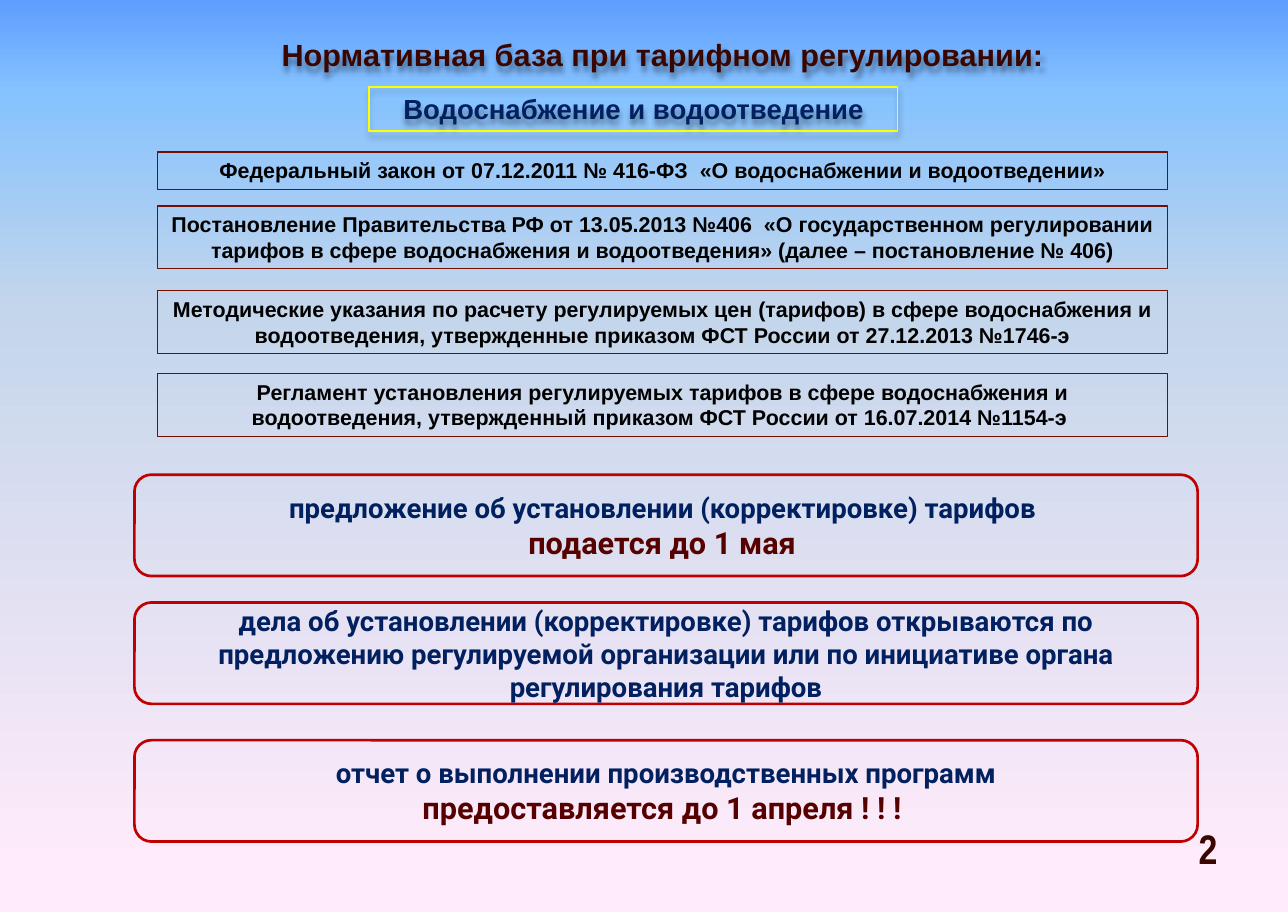
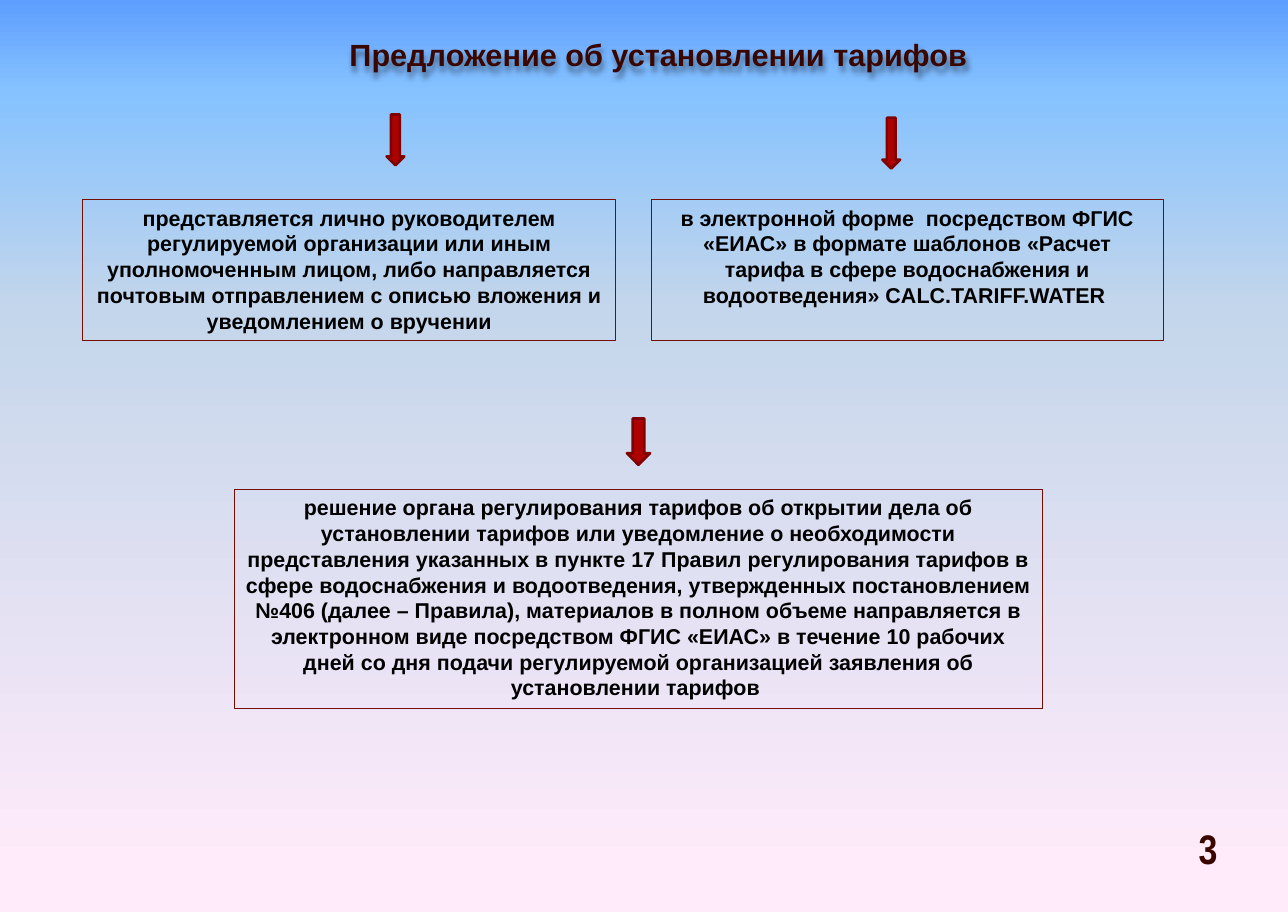
from lxml.etree import SubElement
from pptx import Presentation
from pptx.dml.color import RGBColor
from pptx.enum.shapes import MSO_SHAPE
from pptx.enum.text import MSO_ANCHOR, PP_ALIGN
from pptx.oxml.ns import qn
from pptx.util import Inches, Pt

MAROON = "3A0700"
DEEP_RED = "560000"
NAVY = "002060"
BLACK = "000000"
FRAME = "730E00"
RED = "C00000"
ARROW_FILL = "AD0101"
ARROW_LINE = "800101"
YELLOW = "FFFF00"
BACKGROUND_STOPS = [(0, "5E9EFF"), (10, "85C2FF"), (34, "C4D6EB"), (95, "FFEBFA")]


def color(value):
    return RGBColor.from_string(value)


class Deck:
    def __init__(self, width, height):
        self.presentation = Presentation()
        self.presentation.slide_width = Inches(width)
        self.presentation.slide_height = Inches(height)
        self.slide = None
        self.paint_background()

    def paint_background(self):
        master = self.presentation.slide_master
        fill = master.background.fill
        fill.gradient()
        fill.gradient_angle = 270
        stops = master.element.find(".//" + qn("a:gsLst"))
        for stop in list(stops):
            stops.remove(stop)
        for position, value in BACKGROUND_STOPS:
            stop = SubElement(stops, qn("a:gs"), pos=str(position * 1000))
            SubElement(stop, qn("a:srgbClr"), val=value)

    def add_slide(self, title, number):
        self.slide = self.presentation.slides.add_slide(self.presentation.slide_layouts[6])
        title_box = self.text_box(1.11, 0.28, 9.81, 0.44)
        self.set_text(title_box, [(title, 20, MAROON)], "Arial")
        self.cast_shadow(title_box)
        number_box = self.text_box(10.48, 7.48, 0.97, 0.44)
        frame = number_box.text_frame
        frame.margin_left = frame.margin_right = frame.margin_top = frame.margin_bottom = 0
        self.set_text(number_box, [(str(number), 27, MAROON)], "Arial Narrow", MSO_ANCHOR.MIDDLE)

    def text_box(self, left, top, width, height):
        return self.slide.shapes.add_textbox(Inches(left), Inches(top), Inches(width), Inches(height))

    def shape(self, kind, left, top, width, height, line, weight, fill=None):
        shape = self.slide.shapes.add_shape(
            kind, Inches(left), Inches(top), Inches(width), Inches(height))
        shape.shadow.inherit = False
        shape.line.color.rgb = color(line)
        shape.line.width = Pt(weight)
        if fill:
            shape.fill.solid()
            shape.fill.fore_color.rgb = color(fill)
        else:
            shape.fill.background()
        return shape

    def set_text(self, shape, lines, font, anchor=MSO_ANCHOR.TOP):
        frame = shape.text_frame
        frame.word_wrap = True
        frame.vertical_anchor = anchor
        for index, (text, size, value) in enumerate(lines):
            paragraph = frame.add_paragraph() if index else frame.paragraphs[0]
            paragraph.text = text
            paragraph.alignment = PP_ALIGN.CENTER
            paragraph.font.name = font
            paragraph.font.size = Pt(size)
            paragraph.font.bold = True
            paragraph.font.color.rgb = color(value)

    def cast_shadow(self, shape):
        shape.shadow.inherit = False
        effects = shape.element.spPr.find(qn("a:effectLst"))
        shadow = SubElement(effects, qn("a:outerShdw"), blurRad=str(Pt(4)), dist=str(Pt(3)),
                            dir="5400000", rotWithShape="0")
        tint = SubElement(shadow, qn("a:srgbClr"), val=BLACK)
        SubElement(tint, qn("a:alpha"), val="40000")

    def subtitle(self, text, left, top, width, height):
        shape = self.shape(MSO_SHAPE.RECTANGLE, left, top, width, height, YELLOW, 0.75)
        self.set_text(shape, [(text, 18, NAVY)], "Arial")
        self.cast_shadow(shape)

    def text_panel(self, text, left, top, width, height):
        shape = self.shape(MSO_SHAPE.RECTANGLE, left, top, width, height, FRAME, 0.75)
        self.set_text(shape, [(text, 14, BLACK)], "Arial")

    def deadline(self, top, text, date=None):
        shape = self.shape(MSO_SHAPE.ROUNDED_RECTANGLE, 1.22, top, 9.65, 0.92, RED, 1.75)
        lines = [(text, 18, NAVY)]
        if date:
            lines.append((date, 20, DEEP_RED))
        self.set_text(shape, lines, "Roboto", MSO_ANCHOR.MIDDLE)

    def arrow(self, left, top, width, height):
        self.shape(MSO_SHAPE.DOWN_ARROW, left, top, width, height, ARROW_LINE, 1.75, ARROW_FILL)


def add_legal_basis(deck):
    deck.add_slide("Нормативная база при тарифном регулировании:", 2)
    deck.subtitle("Водоснабжение и водоотведение", 3.35, 0.79, 4.8, 0.4)
    regulations = [
        (1.38, 0.34, "Федеральный закон от 07.12.2011 № 416-ФЗ  «О водоснабжении и водоотведении»"),
        (1.87, 0.57, "Постановление Правительства РФ от 13.05.2013 №406  «О государственном "
                     "регулировании тарифов в сфере водоснабжения и водоотведения» "
                     "(далее – постановление № 406)"),
        (2.64, 0.57, "Методические указания по расчету регулируемых цен (тарифов) в сфере "
                     "водоснабжения и водоотведения, утвержденные приказом ФСТ России "
                     "от 27.12.2013 №1746-э"),
        (3.39, 0.57, "Регламент установления регулируемых тарифов в сфере водоснабжения и "
                     "водоотведения, утвержденный приказом ФСТ России от 16.07.2014 №1154-э "),
    ]
    for top, height, text in regulations:
        deck.text_panel(text, 1.43, top, 9.17, height)
    deck.deadline(4.31, "предложение об установлении (корректировке) тарифов ", "подается до 1 мая ")
    deck.deadline(5.47, "дела об установлении (корректировке) тарифов открываются по предложению "
                        "регулируемой организации или по инициативе органа регулирования тарифов")
    deck.deadline(6.72, "отчет о выполнении производственных программ",
                  "предоставляется до 1 апреля ! ! ! ")


def add_proposal(deck):
    deck.add_slide("Предложение об установлении тарифов ", 3)
    deck.text_panel("представляется лично руководителем регулируемой организации или иным "
                    "уполномоченным лицом, либо направляется почтовым отправлением с описью "
                    "вложения и уведомлением о вручении", 0.75, 1.81, 4.84, 1.28)
    deck.text_panel("в электронной форме  посредством ФГИС «ЕИАС» в формате шаблонов «Расчет "
                    "тарифа в сфере водоснабжения и водоотведения» CALC.TARIFF.WATER ",
                    5.91, 1.81, 4.65, 1.28)
    deck.text_panel("решение органа регулирования тарифов об открытии дела об установлении "
                    "тарифов или уведомление о необходимости представления указанных в пункте 17 "
                    "Правил регулирования тарифов в сфере водоснабжения и водоотведения, "
                    "утвержденных постановлением №406 (далее – Правила), материалов в полном "
                    "объеме направляется в электронном виде посредством ФГИС «ЕИАС» в течение "
                    "10 рабочих дней со дня подачи регулируемой организацией заявления об "
                    "установлении тарифов ", 2.13, 4.44, 7.33, 1.99)
    deck.arrow(3.51, 1.04, 0.16, 0.46)
    deck.arrow(8.01, 1.07, 0.16, 0.46)
    deck.arrow(5.69, 3.8, 0.21, 0.42)


def main():
    deck = Deck(11.69, 8.28)
    add_legal_basis(deck)
    add_proposal(deck)
    deck.presentation.save("out.pptx")


if __name__ == "__main__":
    main()
